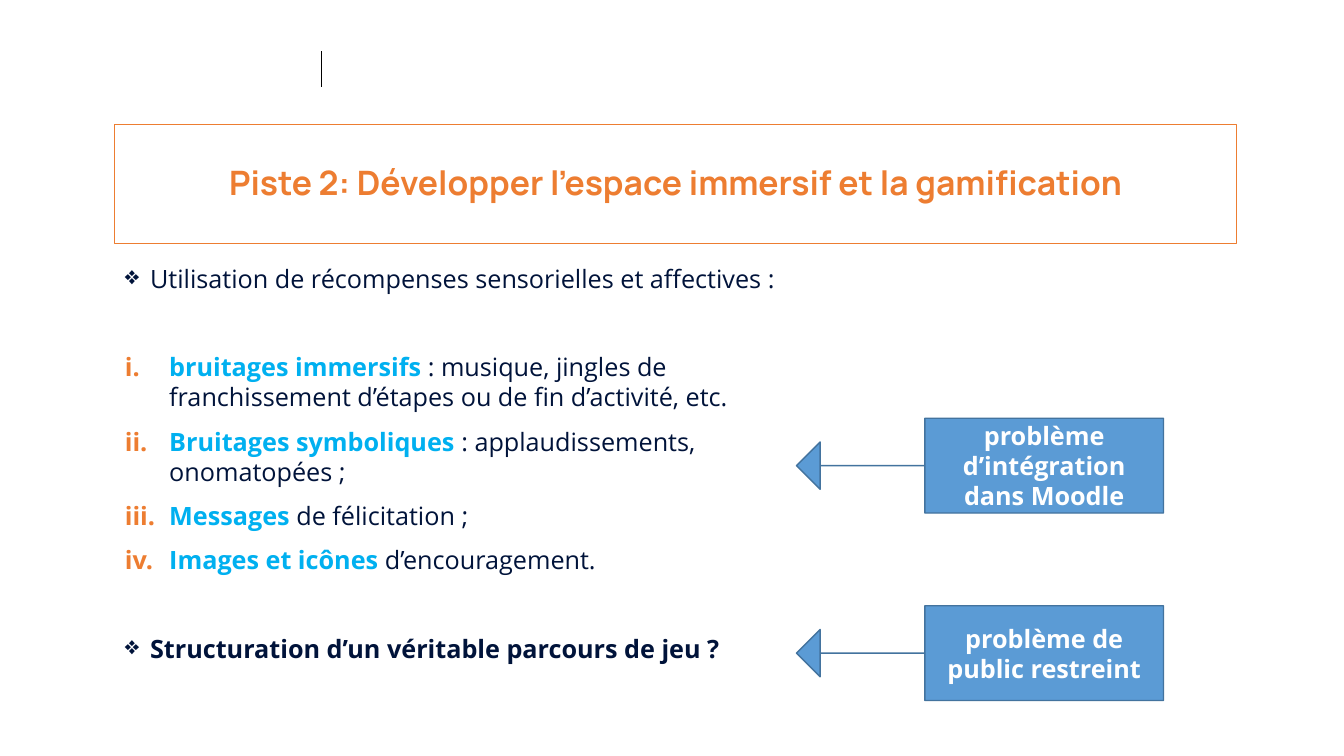
from dataclasses import dataclass

from lxml.etree import SubElement
from pptx import Presentation
from pptx.dml.color import RGBColor as RGB
from pptx.enum.shapes import MSO_CONNECTOR as LINE, MSO_SHAPE as SHAPE
from pptx.enum.text import MSO_ANCHOR as ANCHOR, PP_ALIGN as ALIGN
from pptx.oxml.ns import qn
from pptx.util import Inches, Pt


@dataclass(frozen=True)
class Theme:
    orange: str = "ED7D31"
    navy: str = "00133A"
    cyan: str = "00B0F0"
    blue: str = "5B9BD5"
    blue_edge: str = "43739E"
    black: str = "000000"
    white: str = "FFFFFF"
    heading_font: str = "Manrope"
    body_font: str = "Open Sans"
    heading_size: float = 24
    body_size: float = 18
    gap: float = 10
    section_gap: float = 41.6


class SlideBuilder:
    """Draws on one slide; boxes are (left, top, width, height) in percent of its size."""

    def __init__(self, prs, theme):
        self.width, self.height = prs.slide_width, prs.slide_height
        self.theme = theme
        self.shapes = prs.slides.add_slide(prs.slide_layouts[6]).shapes

    def x(self, share):
        return round(self.width * share / 100)

    def y(self, share):
        return round(self.height * share / 100)

    def place(self, box):
        left, top, width, height = box
        return self.x(left), self.y(top), self.x(width), self.y(height)

    def run(self, p, text, color, bold=False, heading=False):
        t = self.theme
        r = p.add_run()
        r.text = text
        r.font.name = t.heading_font if heading else t.body_font
        r.font.size = Pt(t.heading_size if heading else t.body_size)
        r.font.bold = bold
        r.font.color.rgb = RGB.from_string(color)

    def shape(self, kind, box, fill, edge, weight):
        sp = self.shapes.add_shape(kind, *self.place(box))
        sp.shadow.inherit = False
        if fill:
            sp.fill.solid()
            sp.fill.fore_color.rgb = RGB.from_string(fill)
        else:
            sp.fill.background()
        sp.line.color.rgb = RGB.from_string(edge)
        sp.line.width = Pt(weight)
        tf = sp.text_frame
        tf.word_wrap = True
        tf.vertical_anchor = ANCHOR.MIDDLE
        tf.paragraphs[0].alignment = ALIGN.CENTER
        return sp

    def title(self, text, box):
        sp = self.shape(SHAPE.RECTANGLE, box, None, self.theme.orange, 0.75)
        p = sp.text_frame.paragraphs[0]
        p.line_spacing = 0.9
        self.run(p, text, self.theme.orange, bold=True, heading=True)

    def callout(self, text, box):
        t = self.theme
        sp = self.shape(SHAPE.LEFT_ARROW_CALLOUT, box, t.blue, t.blue_edge, 1)
        for i, value in enumerate((0, 0.25, 0.25, 0.65)):
            sp.adjustments[i] = value
        self.run(sp.text_frame.paragraphs[0], text, t.white, bold=True)

    def vertical_rule(self, left, top, bottom):
        line = self.shapes.add_connector(
            LINE.STRAIGHT, self.x(left), self.y(top), self.x(left), self.y(bottom))
        line.line.color.rgb = RGB.from_string(self.theme.black)
        line.line.width = Pt(0.5)
        SubElement(line._element.spPr, qn("a:effectLst"))

    def text_box(self, box):
        tf = self.shapes.add_textbox(*self.place(box)).text_frame
        tf.word_wrap = True
        return tf

    def item(self, tf, runs, numbered=False, space=0):
        """Adds a diamond bullet or a roman-numbered line of (text, color, bold) runs."""
        p = tf.paragraphs[0]
        if p.runs:
            p = tf.add_paragraph()
        pPr = p._p.get_or_add_pPr()
        indent = Inches(0.44 if numbered else 0.25)
        pPr.set("marL", str(indent))
        pPr.set("indent", str(-indent))
        color = SubElement(pPr, qn("a:buClr"))
        SubElement(color, qn("a:srgbClr"),
                   val=self.theme.orange if numbered else self.theme.navy)
        if numbered:
            SubElement(pPr, qn("a:buAutoNum"), type="romanLcPeriod")
        else:
            SubElement(pPr, qn("a:buChar"), char="❖")
        if space:
            p.space_before = Pt(space)
        for text, run_color, bold in runs:
            self.run(p, text, run_color, bold)


def main():
    prs = Presentation()
    prs.slide_width, prs.slide_height = Inches(13.33), Inches(7.5)
    t = Theme()
    s = SlideBuilder(prs, t)

    s.vertical_rule(23.93, 6.8, 11.47)
    s.title("Piste 2: Développer l’espace immersif et la gamification",
            (8.55, 16.53, 83.42, 15.73))

    body = s.text_box((8.55, 34.13, 51.24, 56.53))
    s.item(body, [("Utilisation de récompenses sensorielles et affectives :", t.navy, False)])
    rewards = [
        ("bruitages immersifs",
         " : musique, jingles de franchissement d’étapes ou de fin d’activité, etc."),
        ("Bruitages symboliques ", ": applaudissements, onomatopées ;"),
        ("Messages", " de félicitation ;"),
        ("Images et icônes ", "d’encouragement."),
    ]
    for i, (name, detail) in enumerate(rewards):
        s.item(body, [(name, t.cyan, True), (detail, t.navy, False)],
               numbered=True, space=t.gap if i else t.section_gap)
    s.item(body, [("Structuration d’un véritable parcours de jeu ?", t.navy, True)],
           space=t.section_gap)

    problems = ["problème d’intégration dans Moodle", "problème de public restreint"]
    for i, problem in enumerate(problems):
        s.callout(problem, (59.26, 55.33 + 24.8 * i, 27.31, 12.53))

    prs.save("out.pptx")


if __name__ == "__main__":
    main()
